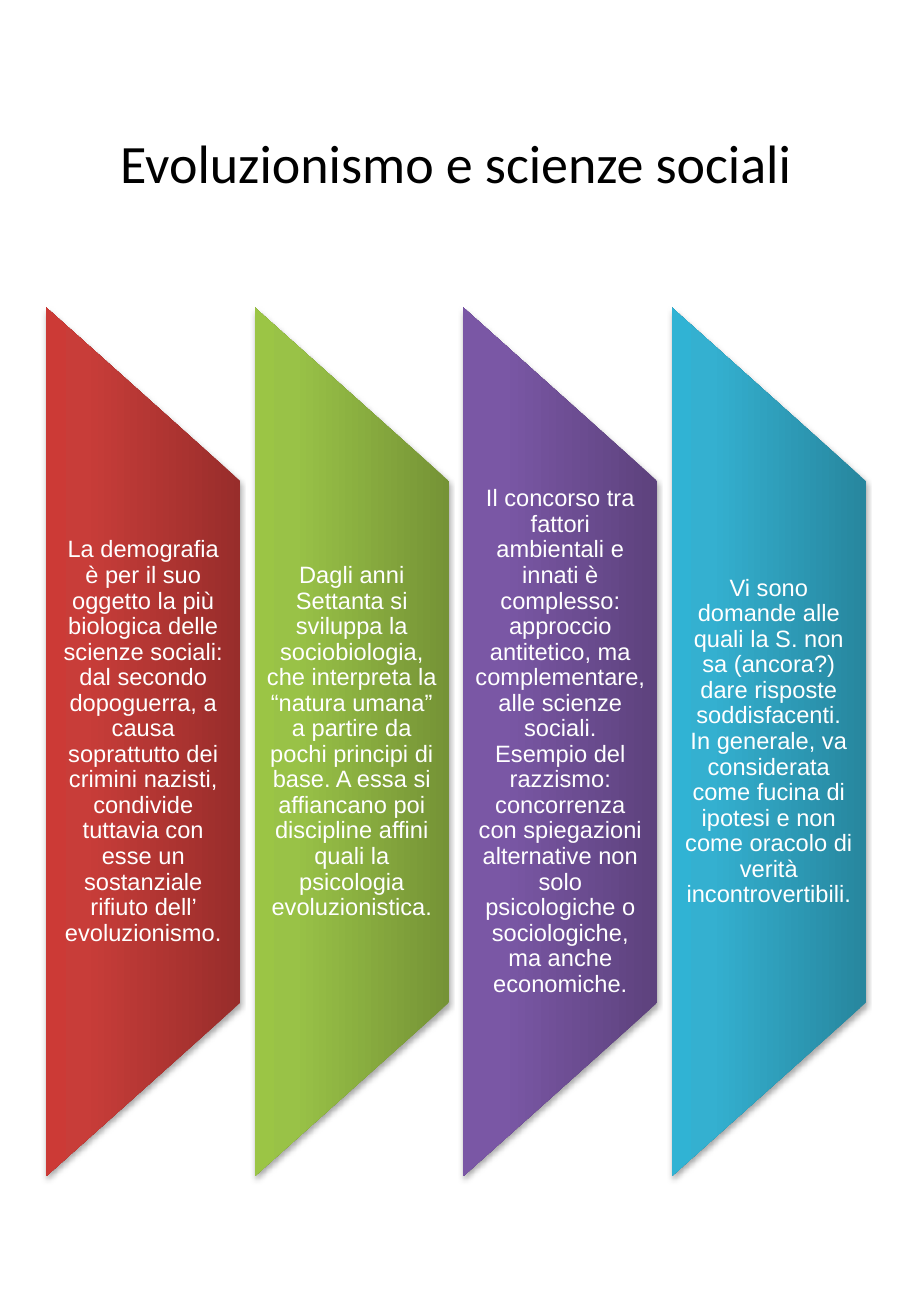
import pptx
import pptx.dml.color
import pptx.enum.shapes
import pptx.enum.text
import pptx.oxml
import pptx.oxml.ns
import pptx.util

Inches = pptx.util.Inches
NAMESPACE = pptx.oxml.ns.nsdecls("a")
COLORS = {
    "title": "000000",
    "text": "FFFFFF",
    "shadow": "000000",
    "red": ("982D2B", "C83D39", "CC3A36"),
    "green": ("759336", "99C247", "9BC545"),
    "purple": ("5D427D", "7A57A5", "7A56A7"),
    "blue": ("27869E", "34B0D0", "30B3D4"),
}
STOPS = (0, 80, 100)
TITLE = "Evoluzionismo e scienze sociali"
TITLE_FORMAT = {"name": "Calibri", "size": pptx.util.Pt(32)}
PANEL_FORMAT = {"name": "Arial", "size": pptx.util.Pt(14)}
PANELS = (
    ("red", "La demografia è per il suo oggetto la più biologica delle scienze sociali: "
     "dal secondo dopoguerra, a causa soprattutto dei crimini nazisti, condivide tuttavia "
     "con esse un sostanziale rifiuto dell’ evoluzionismo."),
    ("green", "Dagli anni Settanta si sviluppa la sociobiologia, che interpreta la “natura "
     "umana” a partire da pochi principi di base. A essa si affiancano poi discipline "
     "affini quali la psicologia evoluzionistica."),
    ("purple", "Il concorso tra fattori ambientali e innati è complesso: approccio "
     "antitetico, ma complementare, alle scienze sociali. Esempio del razzismo: concorrenza "
     "con spiegazioni alternative non solo psicologiche o sociologiche, ma anche economiche."),
    ("blue", "Vi sono domande alle quali la S. non sa (ancora?) dare risposte soddisfacenti. "
     "In generale, va considerata come fucina di ipotesi e non come oracolo di verità "
     "incontrovertibili."),
)


def add_text(slide, box, text, font_format, color, margins, line_spacing=1.0):
    """Add a centred, wrapped text box."""
    frame = slide.shapes.add_textbox(*map(Inches, box)).text_frame
    side, end = map(Inches, margins)
    frame_format = {
        "word_wrap": True,
        "vertical_anchor": pptx.enum.text.MSO_ANCHOR.MIDDLE,
        "margin_left": side,
        "margin_right": side,
        "margin_top": end,
        "margin_bottom": end,
    }
    for name, value in frame_format.items():
        setattr(frame, name, value)
    paragraph = frame.paragraphs[0]
    paragraph.alignment = pptx.enum.text.PP_ALIGN.CENTER
    paragraph.line_spacing = line_spacing
    run = paragraph.add_run()
    run.text = text
    for name, value in font_format.items():
        setattr(run.font, name, value)
    run.font.color.rgb = pptx.dml.color.RGBColor.from_string(COLORS[color])


def paint_panel(shape, colors):
    """Give a panel its three-stop gradient and soft shadow."""
    shape.fill.gradient()
    shape.fill.gradient_angle = 90
    stop_list = shape.fill._fill._gradFill.find(pptx.oxml.ns.qn("a:gsLst"))
    for stop in list(stop_list):
        stop_list.remove(stop)
    for position, color in zip(STOPS, colors):
        stop_list.append(pptx.oxml.parse_xml(
            f'<a:gs {NAMESPACE} pos="{position * 1000}"><a:srgbClr val="{color}"/></a:gs>'))
    shape.line.fill.background()
    shape.shadow.inherit = False
    effects = shape._element.spPr.find(pptx.oxml.ns.qn("a:effectLst"))
    blur, distance = pptx.util.Pt(3.1), pptx.util.Pt(1.8)
    effects.append(pptx.oxml.parse_xml(
        f'<a:outerShdw {NAMESPACE} blurRad="{blur}" dist="{distance}" dir="5400000" '
        f'rotWithShape="0"><a:srgbClr val="{COLORS["shadow"]}"><a:alpha val="35000"/>'
        '</a:srgbClr></a:outerShdw>'))


def add_panel(slide, box, color, text):
    """Add one upright trapezoid with its text in the middle three fifths."""
    left, top, width, height = box
    offset = (height - width) / 2
    shape = slide.shapes.add_shape(
        pptx.enum.shapes.MSO_SHAPE.FLOWCHART_MANUAL_OPERATION,
        Inches(left - offset), Inches(top + offset), Inches(height), Inches(width))
    shape.rotation = 270
    paint_panel(shape, COLORS[color])
    text_box = (left, top + height / 5, width, height * 3 / 5)
    add_text(slide, text_box, text, PANEL_FORMAT, "text", (0.1, 0), 0.9)


def add_panels(slide, box):
    """Spread the panels evenly over the box."""
    left, top, width, height = box
    panel_width = 1.6
    pitch = (width - panel_width) / (len(PANELS) - 1)
    for index, (color, text) in enumerate(PANELS):
        add_panel(slide, (left + index * pitch, top, panel_width, height), color, text)


def main():
    """Build and save the presentation."""
    presentation = pptx.Presentation()
    presentation.slide_width = Inches(7.5)
    presentation.slide_height = Inches(10.83)
    slide = presentation.slides.add_slide(presentation.slide_layouts[6])
    add_text(slide, (0.38, 0.43, 6.75, 1.81), TITLE, TITLE_FORMAT, "title", (0.07, 0.04))
    add_panels(slide, (0.38, 2.53, 6.75, 7.15))
    presentation.save("out.pptx")


if __name__ == "__main__":
    main()
